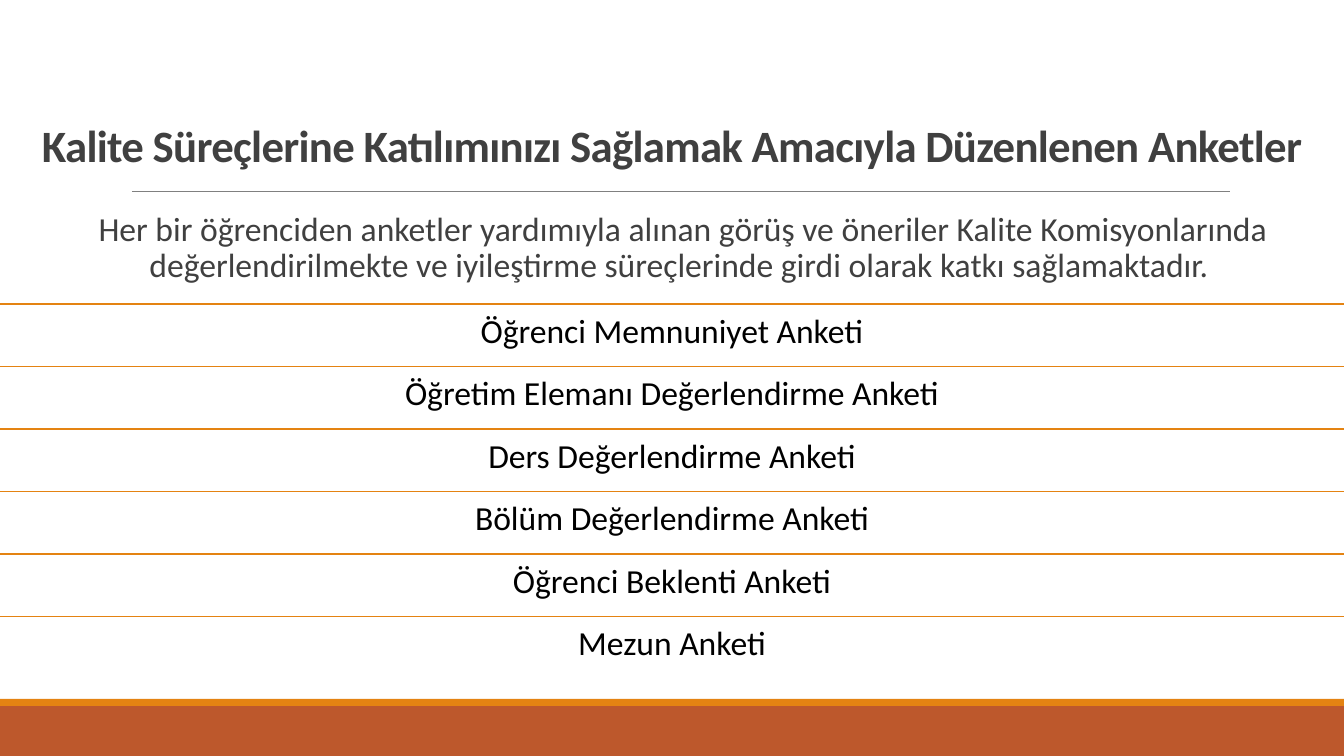
from lxml import etree
from pptx import Presentation
from pptx.dml.color import RGBColor
from pptx.enum.shapes import MSO_CONNECTOR, MSO_SHAPE
from pptx.enum.text import MSO_ANCHOR, MSO_AUTO_SIZE, PP_ALIGN
from pptx.oxml.ns import qn
from pptx.util import Pt

TITLE = "Kalite Süreçlerine Katılımınızı Sağlamak Amacıyla Düzenlenen Anketler"
INTRO = ("Her bir öğrenciden anketler yardımıyla alınan görüş ve öneriler "
         "Kalite Komisyonlarında değerlendirilmekte ve iyileştirme süreçlerinde "
         "girdi olarak katkı sağlamaktadır. ")
POLLS = [
    "Öğrenci Memnuniyet Anketi",
    "Öğretim Elemanı Değerlendirme Anketi",
    "Ders Değerlendirme Anketi",
    "Bölüm Değerlendirme Anketi",
    "Öğrenci Beklenti Anketi",
    "Mezun Anketi",
]

RUST = RGBColor(0xBD, 0x58, 0x2C)
AMBER = RGBColor(0xE4, 0x83, 0x12)
GRAY = RGBColor(0x80, 0x80, 0x80)
DARK = RGBColor(0x40, 0x40, 0x40)
BLACK = RGBColor(0, 0, 0)

RECT = MSO_SHAPE.RECTANGLE
LINE = MSO_CONNECTOR.STRAIGHT
TOP, BOTTOM = MSO_ANCHOR.TOP, MSO_ANCHOR.BOTTOM
FIXED = MSO_AUTO_SIZE.NONE
CENTER = PP_ALIGN.CENTER

WIDE, HIGH = 1344, 756
FIRST, LAST = 304, 679
BARS = [(706, 50, RUST), (699, 7, AMBER)]

TITLE_FMT = {
    "frame": {"vertical_anchor": BOTTOM},
    "para": {"line_spacing": 0.85},
    "font": {"size": Pt(32), "bold": True},
}
INTRO_FMT = {
    "frame": {"vertical_anchor": TOP, "margin_left": 0, "margin_right": 0},
    "para": {"level": 1, "line_spacing": 0.9,
             "space_before": Pt(2), "space_after": Pt(4)},
    "font": {"size": Pt(24)},
}


def px(num):
    return round(num * 914400 / 100.8)


POLL_FMT = {
    "frame": {"vertical_anchor": TOP, "margin_left": px(10), "margin_right": px(10),
              "margin_top": px(10), "margin_bottom": px(10)},
    "para": {"line_spacing": 0.9},
    "font": {"size": Pt(24)},
}


def apply(item, fmt):
    for key, val in fmt.items():
        setattr(item, key, val)


def place(shape, *box):
    names = ("left", "top", "width", "height")
    apply(shape, dict(zip(names, map(px, box))))


def write(shape, text, fmt, color):
    frame = shape.text_frame
    apply(frame, {"word_wrap": True, "auto_size": FIXED, **fmt["frame"]})
    para = frame.paragraphs[0]
    apply(para, {"alignment": CENTER, **fmt["para"]})
    run = para.add_run()
    run.text = text
    apply(run.font, {"name": "Calibri", **fmt["font"]})
    run.font.color.rgb = color
    return para, run


def rule(shapes, left, right, top, color, size):
    line = shapes.add_connector(LINE, px(left), px(top), px(right), px(top))
    line.line.color.rgb = color
    line.line.width = Pt(size)
    etree.SubElement(line._element.spPr, qn("a:effectLst"))


def main():
    deck = Presentation()
    apply(deck, {"slide_width": px(WIDE), "slide_height": px(HIGH)})
    slide = deck.slides.add_slide(deck.slide_layouts[1])
    shapes = slide.shapes

    for top, high, color in BARS:
        bar = shapes.add_shape(RECT, 0, px(top), px(WIDE), px(high))
        bar.shadow.inherit = False
        bar.fill.solid()
        bar.fill.fore_color.rgb = color
        bar.line.fill.background()
    rule(shapes, 132, 1230, 191, GRAY, 0.5)

    place(shapes.title, 0, 17, WIDE, 160)
    para, run = write(shapes.title, TITLE, TITLE_FMT, DARK)
    run.font._element.set("spc", "-50")

    body = slide.placeholders[1]
    place(body, 0, 207, WIDE, 444)
    para, run = write(body, INTRO, INTRO_FMT, DARK)
    props = para._p.get_or_add_pPr()
    apply_indent = {"marL": px(22), "indent": 0}
    for key, val in apply_indent.items():
        props.set(key, str(val))
    etree.SubElement(props, qn("a:buNone"))

    step = (LAST - FIRST) / len(POLLS)
    for num, poll in enumerate(POLLS):
        top = FIRST + num * step
        rule(shapes, 0, WIDE, top, AMBER, 1.25)
        box = shapes.add_textbox(0, px(top), px(WIDE), px(step))
        write(box, poll, POLL_FMT, BLACK)

    deck.save("out.pptx")


if __name__ == "__main__":
    main()
